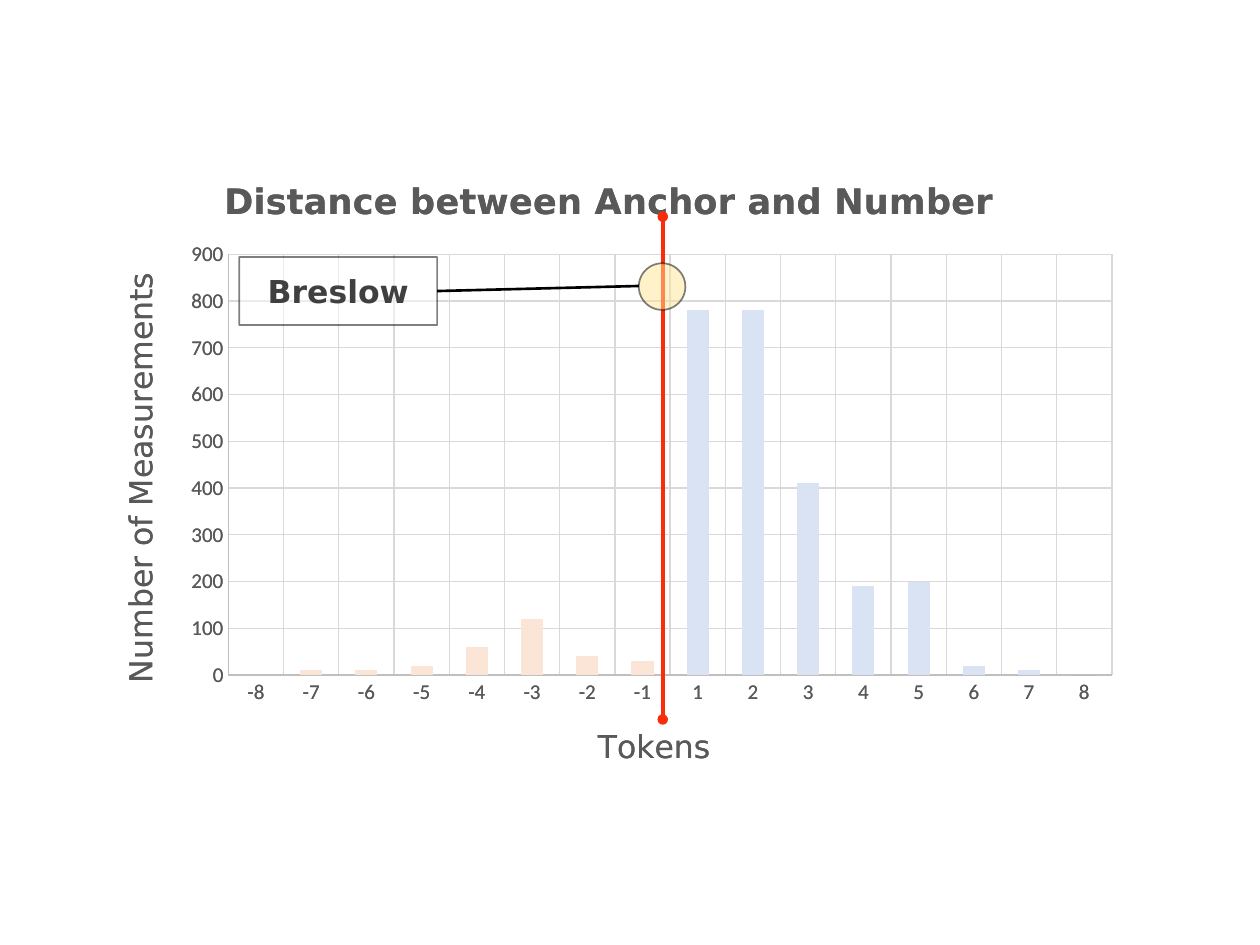
from lxml.etree import SubElement
from pptx import Presentation
from pptx.chart.data import CategoryChartData
from pptx.dml.color import RGBColor
from pptx.enum.chart import XL_CHART_TYPE, XL_TICK_MARK
from pptx.enum.shapes import MSO_CONNECTOR, MSO_SHAPE
from pptx.enum.text import MSO_ANCHOR, PP_ALIGN
from pptx.oxml.ns import qn
from pptx.util import Inches, Pt

BLACK = RGBColor(0x00, 0x00, 0x00)
WHITE = RGBColor(0xFF, 0xFF, 0xFF)
DARK_GRAY = RGBColor(0x40, 0x40, 0x40)
GRAY = RGBColor(0x59, 0x59, 0x59)
AXIS_GRAY = RGBColor(0xBF, 0xBF, 0xBF)
GRID_GRAY = RGBColor(0xD9, 0xD9, 0xD9)
RED = RGBColor(0xFB, 0x2C, 0x09)
YELLOW = RGBColor(0xFF, 0xE6, 0x99)
ORANGE = RGBColor(0xF4, 0xB1, 0x83)
PALE_ORANGE = RGBColor(0xFB, 0xE5, 0xD6)
BLUE = RGBColor(0x5B, 0x9B, 0xD5)
PALE_BLUE = RGBColor(0xDA, 0xE3, 0xF3)

DISTANCES = [*range(-8, 0), *range(1, 9)]
MEASUREMENTS = [0, 10, 10, 20, 60, 120, 40, 30,
                780, 780, 410, 190, 200, 20, 10, 0]
FULL_COLORS = [ORANGE] * 8 + [BLUE] * 8
FADED_COLORS = [ORANGE] + [PALE_ORANGE] * 7 + [PALE_BLUE] * 7 + [BLUE]


def place(owner, x, y, w=None, h=None):
    """Fix a chart part at fractions of the chart's width and height."""
    layout = owner.find(qn("c:layout"))
    if layout is None:
        layout = owner.makeelement(qn("c:layout"))
        owner.insert(0, layout)
    manual = SubElement(layout, qn("c:manualLayout"))
    settings = [("xMode", "edge"), ("yMode", "edge"), ("x", x), ("y", y)]
    if w is not None:
        settings = [("layoutTarget", "inner"), *settings, ("w", w), ("h", h)]
    for tag, value in settings:
        SubElement(manual, qn(f"c:{tag}")).set("val", str(value))


def set_half_transparent(color_fill):
    color = color_fill.find(".//" + qn("a:srgbClr"))
    SubElement(color, qn("a:alpha")).set("val", "50000")


class ChartSlide:
    label_font = "DejaVu Sans"
    chart_font = "Calibri"

    def __init__(self, slide):
        self.shapes = slide.shapes

    def add_run(self, paragraph, text, size, color, bold=False):
        run = paragraph.add_run()
        run.text = text
        run.font.name = self.label_font
        run.font.size = Pt(size)
        run.font.bold = bold
        run.font.color.rgb = color

    def title(self, title, text, size, x, y, bold=False):
        self.add_run(title.text_frame.paragraphs[0], text, size, GRAY, bold)
        place(title._element, x, y)

    def axis(self, axis, text, x, y):
        axis.has_title = True
        self.title(axis.axis_title, text, 18, x, y)
        axis.major_tick_mark = axis.minor_tick_mark = XL_TICK_MARK.NONE
        axis.has_major_gridlines = True
        for line, color in ((axis.format.line, AXIS_GRAY),
                            (axis.major_gridlines.format.line, GRID_GRAY)):
            line.color.rgb = color
            line.width = Pt(0.75)
        font = axis.tick_labels.font
        font.name, font.size = self.chart_font, Pt(12)
        font.color.rgb = GRAY

    def column_chart(self, left, top, width, height, bar_colors):
        data = CategoryChartData()
        data.categories = [str(distance) for distance in DISTANCES]
        data.add_series("Series 1", MEASUREMENTS)
        chart = self.shapes.add_chart(
            XL_CHART_TYPE.COLUMN_CLUSTERED, Inches(left), Inches(top),
            Inches(width), Inches(height), data).chart
        chart.font.name, chart.font.size = self.chart_font, Pt(10)
        chart.font.color.rgb = BLACK
        chart.has_legend = False
        chart.has_title = True
        self.title(chart.chart_title, "Distance between Anchor and Number",
                   20, 0.12, 0.02, bold=True)
        place(chart._chartSpace.find(".//" + qn("c:plotArea")),
              0.13, 0.15, 0.85, 0.66)
        self.axis(chart.category_axis, "Tokens", 0.48, 0.88)
        counts = chart.value_axis
        self.axis(counts, "Number of Measurements", 0.02, 0.17)
        body = counts.axis_title._element.find(".//" + qn("a:bodyPr"))
        body.set("rot", "-5400000")
        body.set("vert", "horz")
        counts.minimum_scale, counts.maximum_scale = 0, 900
        counts.major_unit = 100
        plot = chart.plots[0]
        plot.gap_width = 150
        plot.vary_by_categories = False
        bars = plot.series[0]
        bars.format.fill.solid()
        bars.format.fill.fore_color.rgb = BLUE
        for index, color in enumerate(bar_colors):
            if color != BLUE:
                fill = bars.points[index].format.fill
                fill.solid()
                fill.fore_color.rgb = color

    def translucent_shape(self, kind, left, top, width, height, color):
        shape = self.shapes.add_shape(
            kind, Inches(left), Inches(top), Inches(width), Inches(height))
        shape.shadow.inherit = False
        shape.fill.solid()
        shape.fill.fore_color.rgb = color
        shape.line.color.rgb = BLACK
        shape.line.width = Pt(1)
        properties = shape._element.spPr
        set_half_transparent(properties.find(qn("a:solidFill")))
        set_half_transparent(properties.find(qn("a:ln")))
        return shape

    def label(self, text, left, top, width, height):
        box = self.translucent_shape(
            MSO_SHAPE.RECTANGLE, left, top, width, height, WHITE)
        frame = box.text_frame
        frame.word_wrap = True
        frame.vertical_anchor = MSO_ANCHOR.MIDDLE
        paragraph = frame.paragraphs[0]
        paragraph.alignment = PP_ALIGN.CENTER
        self.add_run(paragraph, text, 18, DARK_GRAY, bold=True)
        return box

    def line(self, x1, y1, x2, y2, color, width, round_ends=False):
        line = self.shapes.add_connector(
            MSO_CONNECTOR.STRAIGHT,
            Inches(x1), Inches(y1), Inches(x2), Inches(y2))
        line.line.color.rgb = color
        line.line.width = Pt(width)
        properties = line._element.spPr
        if round_ends:
            for end in ("a:headEnd", "a:tailEnd"):
                SubElement(properties.find(qn("a:ln")), qn(end)).set("type", "oval")
        SubElement(properties, qn("a:effectLst"))
        return line


def main():
    presentation = Presentation()
    presentation.slide_width = Inches(10)
    presentation.slide_height = Inches(7.5)
    page = ChartSlide(presentation.slides.add_slide(presentation.slide_layouts[6]))

    for bar_colors in (FULL_COLORS, FADED_COLORS):
        page.column_chart(0.74, 1.26, 8.25, 5.06, bar_colors)
    page.line(5.26, 1.72, 5.26, 5.71, RED, 2, round_ends=True)
    circle = page.translucent_shape(MSO_SHAPE.OVAL, 5.07, 2.09, 0.37, 0.37, YELLOW)
    circle.rotation = 47.2
    breslow = page.label("Breslow", 1.9, 2.04, 1.57, 0.54)
    leader = page.line(5.07, 2.27, 3.47, 2.31, BLACK, 1.5)
    leader.end_connect(breslow, 3)

    presentation.save("out.pptx")


if __name__ == "__main__":
    main()
